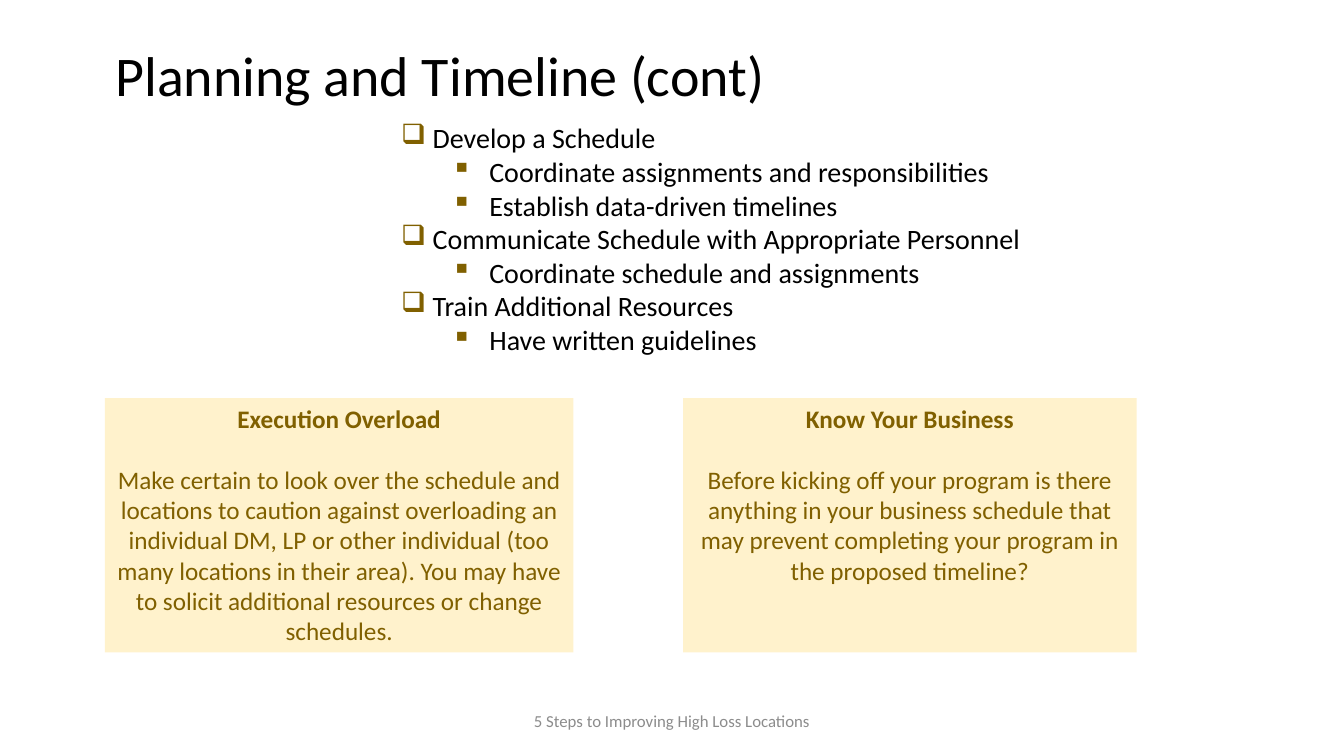
from dataclasses import dataclass

from lxml.etree import SubElement
from pptx import Presentation
from pptx.dml.color import RGBColor
from pptx.enum.shapes import MSO_SHAPE
from pptx.enum.text import MSO_ANCHOR, MSO_AUTO_SIZE, PP_ALIGN
from pptx.oxml.ns import qn
from pptx.slide import Slide
from pptx.text.text import Font, TextFrame
from pptx.util import Pt

BLACK, GREY, OLIVE, CREAM = "000000", "8C8C8C", "806000", "FFF2CC"


@dataclass
class BulletStyle:
    symbol: str
    margin: float
    hanging: float


@dataclass
class Step:
    heading: str
    actions: list[str]


@dataclass
class Callout:
    left: float
    width: float
    heading: str
    advice: str


STEP_BULLET = BulletStyle("❑", 22.5, 22.5)
ACTION_BULLET = BulletStyle("▪", 63, 27)

STEPS = [
    Step("Develop a Schedule", [
        "Coordinate assignments and responsibilities",
        "Establish data-driven timelines",
    ]),
    Step("Communicate Schedule with Appropriate Personnel", [
        "Coordinate schedule and assignments",
    ]),
    Step("Train Additional Resources", ["Have written guidelines"]),
]

CALLOUTS = [
    Callout(75, 334.6, "Execution Overload",
            "Make certain to look over the schedule and locations to caution "
            "against overloading an individual DM, LP or other individual (too "
            "many locations in their area). You may have to solicit additional "
            "resources or change schedules."),
    Callout(487.9, 324, "Know Your Business",
            "Before kicking off your program is there anything in your business "
            "schedule that may prevent completing your program in the proposed "
            "timeline?"),
]


def color(value: str) -> RGBColor:
    return RGBColor.from_string(value)


def set_font(font: Font, size: float, ink: str, bold: bool = False) -> None:
    font.name = "Calibri"
    font.size = Pt(size)
    font.bold = bold
    font.color.rgb = color(ink)


def add_title(slide: Slide, wording: str) -> None:
    title = slide.shapes.title
    title.left, title.top, title.width, title.height = Pt(66.2), Pt(28.8), Pt(511), Pt(54)
    frame = title.text_frame
    frame.text = wording
    frame.auto_size = MSO_AUTO_SIZE.NONE
    frame.vertical_anchor = MSO_ANCHOR.MIDDLE
    frame.margin_left = Pt(16.2)
    paragraph = frame.paragraphs[0]
    paragraph.alignment = PP_ALIGN.LEFT
    paragraph.line_spacing = 0.9
    set_font(paragraph.font, 40, BLACK)


def add_text_box(slide: Slide, left: float, top: float, width: float, height: float) -> TextFrame:
    frame = slide.shapes.add_textbox(Pt(left), Pt(top), Pt(width), Pt(height)).text_frame
    frame.word_wrap = True
    return frame


def add_footer(slide: Slide, wording: str) -> None:
    frame = add_text_box(slide, 318, 500.5, 324, 28.8)
    frame.vertical_anchor = MSO_ANCHOR.MIDDLE
    paragraph = frame.paragraphs[0]
    paragraph.text = wording
    paragraph.alignment = PP_ALIGN.CENTER
    set_font(paragraph.font, 12, GREY)


def add_steps(slide: Slide, steps: list[Step]) -> None:
    frame = add_text_box(slide, 279.4, 82.8, 480, 177.1)
    lines = [
        line
        for step in steps
        for line in [(step.heading, 0, STEP_BULLET)]
        + [(action, 1, ACTION_BULLET) for action in step.actions]
    ]
    for index, (wording, level, bullet) in enumerate(lines):
        paragraph = frame.add_paragraph() if index else frame.paragraphs[0]
        paragraph.text = wording
        paragraph.level = level
        set_font(paragraph.font, 20, BLACK)
        properties = paragraph._p.get_or_add_pPr()
        properties.set("marL", str(Pt(bullet.margin)))
        properties.set("indent", str(-Pt(bullet.hanging)))
        bullet_color = SubElement(properties, qn("a:buClr"))
        SubElement(bullet_color, qn("a:srgbClr"), val=OLIVE)
        SubElement(properties, qn("a:buChar"), char=bullet.symbol)
        properties.append(properties.find(qn("a:defRPr")))


def add_callout(slide: Slide, callout: Callout) -> None:
    panel = slide.shapes.add_shape(
        MSO_SHAPE.RECTANGLE, Pt(callout.left), Pt(284.4), Pt(callout.width), Pt(181.6))
    panel.shadow.inherit = False
    panel.fill.solid()
    panel.fill.fore_color.rgb = color(CREAM)
    panel.line.fill.background()
    frame = panel.text_frame
    frame.word_wrap = True
    frame.vertical_anchor = MSO_ANCHOR.TOP
    heading, advice = frame.paragraphs[0], frame.add_paragraph()
    heading.text, advice.text = callout.heading, callout.advice
    heading.space_after = Pt(22)
    for paragraph in (heading, advice):
        paragraph.alignment = PP_ALIGN.CENTER
        set_font(paragraph.font, 18, OLIVE, bold=paragraph is heading)


def main() -> None:
    presentation = Presentation()
    presentation.slide_width, presentation.slide_height = Pt(960), Pt(540)
    slide = presentation.slides.add_slide(presentation.slide_layouts[5])
    add_title(slide, "Planning and Timeline (cont)")
    add_footer(slide, "5 Steps to Improving High Loss Locations")
    add_steps(slide, STEPS)
    for callout in CALLOUTS:
        add_callout(slide, callout)
    presentation.save("out.pptx")


if __name__ == "__main__":
    main()
